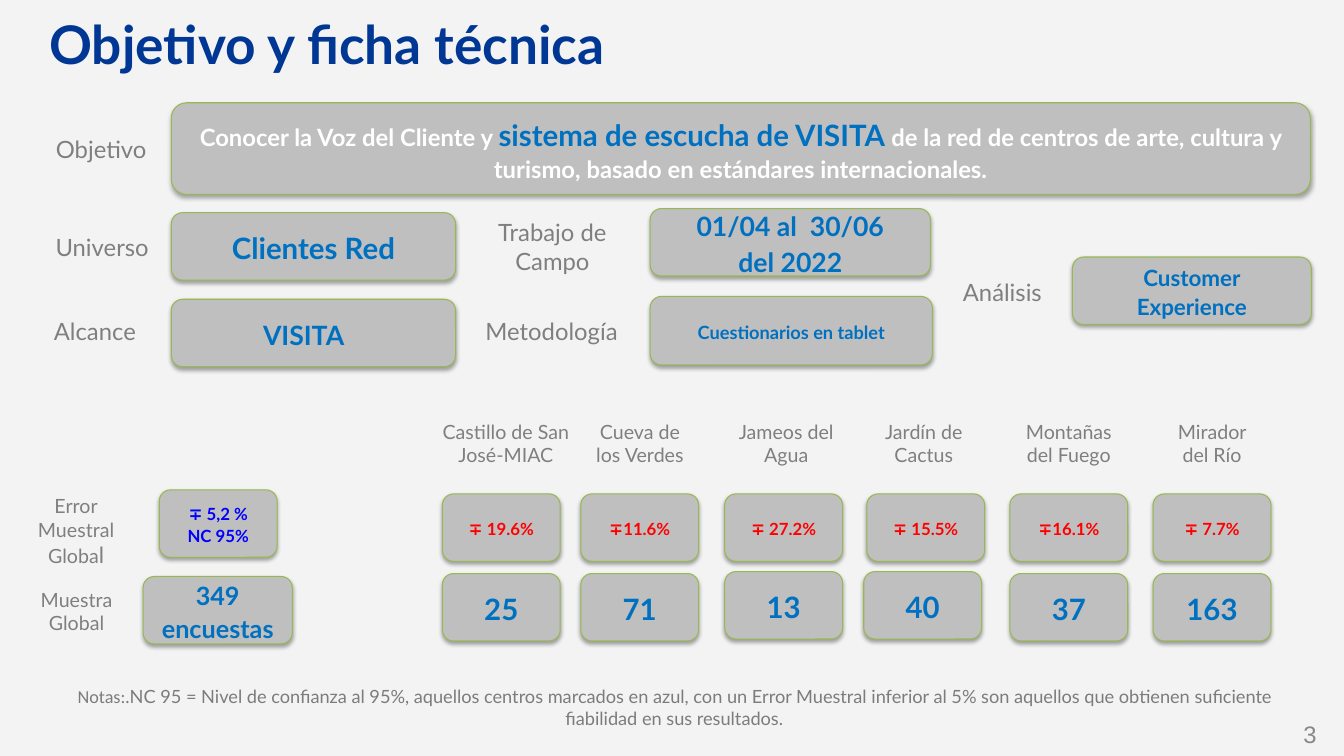
from dataclasses import dataclass

from lxml import etree
from pptx import Presentation
from pptx.dml.color import RGBColor
from pptx.enum import shapes, text
from pptx.oxml import ns
from pptx.util import Pt


@dataclass(frozen=True)
class Style:
    size: float
    color: str
    bold: bool = False
    font: str = "Lato"


class Theme:
    background, box_fill, box_line = "F3F3F3", "BFBFBF", "97B853"
    title = Style(38, "003794", True)
    label = Style(17, "7F7F7F")
    small_label = Style(14, "7F7F7F")
    last_letter = Style(16, "7F7F7F")
    goal = Style(17, "FFFFFF", True)
    value = Style(21, "0070C0", True)
    medium_value = Style(19, "0070C0", True)
    sample_total = Style(18, "0070C0", True)
    analysis = Style(16, "0070C0", True)
    method = Style(13, "0070C0", True)
    global_error = Style(12, "0000FF", True)
    center_error = Style(12, "FF0000", True)
    note = Style(13, "7C7C7C")
    note_lead = Style(13, "7C7C7C", font="Calibri")
    page = Style(17, "888888", font="Arial")


# Content: every text is a list of paragraphs, every paragraph a list of runs
TITLE = [["Objetivo y ficha técnica"]]
GOAL = [["Conocer la Voz del Cliente y ",
         ("sistema de escucha de VISITA ", Theme.value),
         "de la red de centros de arte, cultura y turismo, "
         "basado en estándares internacionales."]]
NOTE = [[("Notas:", Theme.note_lead),
         ".NC 95 = Nivel de confianza al 95%, aquellos centros marcados en azul, "
         "con un Error Muestral inferior al 5% son aquellos que obtienen "
         "suficiente fiabilidad en sus resultados."]]
PAGE = [["3"]]

# (label, label frame, label style, value, value frame, value style)
FACTS = [
    ([["Objetivo"]], (22.3, 91.4, 100, 29.5), Theme.label,
     GOAL, (122.4, 73.4, 813.6, 65.5), Theme.goal),
    ([["Universo"]], (23, 161.3, 100, 29.5), Theme.label,
     [["Clientes Red"]], (122.4, 151.9, 203, 48.2), Theme.value),
    ([["Alcance"]], (15.3, 221.8, 105, 29.5), Theme.label,
     [["VISITA\t"]], (122.4, 213.8, 203, 48.2), Theme.medium_value),
    ([["Trabajo de"], ["Campo"]], (326.2, 151.2, 136.8, 49.7), Theme.label,
     [["01/04 al  30/06"], ["del 2022"]], (464.4, 149, 200.2, 48.2),
     Theme.medium_value),
    ([["Metodología"]], (325.6, 221.8, 136.8, 29.5), Theme.label,
     [["Cuestionarios en tablet"]], (464.4, 211.7, 201.6, 49), Theme.method),
    ([["Análisis"]], (666, 193.7, 100, 29.5), Theme.label,
     [["Customer"], ["Experience"]], (766.1, 183.6, 170.6, 48.2), Theme.analysis),
    ([["Error"], ["Muestral Globa", ("l", Theme.last_letter)]],
     (0, 348.5, 108.7, 61.9), Theme.small_label,
     [["∓ 5,2 %"], ["NC 95%"]], (113.8, 349.9, 84.2, 48.2), Theme.global_error),
    ([["Muestra"], ["Global"]], (0, 415.4, 109.4, 42.5), Theme.small_label,
     [["349"], ["encuestas"]], (102.2, 411.8, 106.6, 48.2), Theme.sample_total),
]

# (center, label left, label width, box left, error, sample, sample nudge)
CENTERS = [
    ("Castillo de San José-MIAC", 307.4, 108, 316, "∓ 19.6%", "25", (0, 0)),
    ("Cueva de los Verdes", 415.4, 83.5, 414.9, "∓11.6%", "71", (0, 0)),
    ("Jameos del Agua", 510.5, 102.2, 517.7, "∓ 27.2%", "13", (0, -1.4)),
    ("Jardín de Cactus", 607.7, 104.4, 619.2, "∓ 15.5%", "40", (-2.2, -1.4)),
    ("Montañas del Fuego", 721.4, 84.2, 721.4, "∓16.1%", "37", (0, 0)),
    ("Mirador del Río", 823.7, 84.2, 823.7, "∓ 7.7%", "163", (0, 0)),
]
LABEL_TOP, LABEL_H = 290.9, 51.1
ERROR_TOP, SAMPLE_TOP = 352.8, 409.7
BOX_W, BOX_H = 84.2, 48.2
INSET_X, INSET_Y = 8.64, 4.32

ALIGN, ANCHOR = text.PP_ALIGN, text.MSO_ANCHOR


def write(shape, paragraphs, style, align=ALIGN.CENTER, anchor=ANCHOR.MIDDLE,
          spacing=1.0, insets=(INSET_X, INSET_Y)):
    frame = shape.text_frame
    frame.word_wrap = True
    frame.auto_size = text.MSO_AUTO_SIZE.NONE
    frame.vertical_anchor = anchor
    frame.margin_left = frame.margin_right = Pt(insets[0])
    frame.margin_top = frame.margin_bottom = Pt(insets[1])
    for index, runs in enumerate(paragraphs):
        paragraph = frame.add_paragraph() if index else frame.paragraphs[0]
        paragraph.alignment = align
        paragraph.line_spacing = spacing
        for item in runs:
            words, look = (item, style) if isinstance(item, str) else item
            run = paragraph.add_run()
            run.text = words
            run.font.name = look.font
            run.font.size = Pt(look.size)
            run.font.bold = look.bold
            run.font.color.rgb = RGBColor.from_string(look.color)


def add_label(slide, frame, paragraphs, style, **options):
    label = slide.shapes.add_textbox(*map(Pt, frame))
    write(label, paragraphs, style, **options)


def add_box(slide, frame, paragraphs, style):
    box = slide.shapes.add_shape(shapes.MSO_SHAPE.ROUNDED_RECTANGLE, *map(Pt, frame))
    box.fill.solid()
    box.fill.fore_color.rgb = RGBColor.from_string(Theme.box_fill)
    box.line.color.rgb = RGBColor.from_string(Theme.box_line)
    box.line.width = Pt(0.75)
    # Soft shadow straight below the box
    box.shadow.inherit = False
    effects = box._element.spPr.find(ns.qn("a:effectLst"))
    shadow = etree.SubElement(effects, ns.qn("a:outerShdw"), blurRad=str(Pt(3.1)),
                              dist=str(Pt(1.8)), dir="5400000", rotWithShape="0")
    color = etree.SubElement(shadow, ns.qn("a:srgbClr"), val="000000")
    etree.SubElement(color, ns.qn("a:alpha"), val="35000")
    write(box, paragraphs, style, spacing=1.1)


def main():
    deck = Presentation()
    deck.slide_width, deck.slide_height = Pt(960), Pt(540)
    slide = deck.slides.add_slide(deck.slide_layouts[5])
    slide.background.fill.solid()
    slide.background.fill.fore_color.rgb = RGBColor.from_string(Theme.background)

    # Title
    title = slide.shapes.title
    title.left, title.top, title.width, title.height = map(Pt, (26.6, 1.4, 901.4, 59))
    write(title, TITLE, Theme.title, align=ALIGN.LEFT)

    # Study facts
    for label, label_frame, label_style, value, value_frame, value_style in FACTS:
        add_label(slide, label_frame, label, label_style)
        add_box(slide, value_frame, value, value_style)

    # Error and sample of each center
    for name, label_x, label_w, box_x, error, sample, (dx, dy) in CENTERS:
        add_label(slide, (label_x, LABEL_TOP, label_w, LABEL_H), [[name]],
                  Theme.small_label)
        add_box(slide, (box_x, ERROR_TOP, BOX_W, BOX_H), [[error]],
                Theme.center_error)
        add_box(slide, (box_x + dx, SAMPLE_TOP + dy, BOX_W, BOX_H), [[sample]],
                Theme.value)

    # Note and page number
    add_label(slide, (26.6, 485.3, 910, 54.7), NOTE, Theme.note, anchor=ANCHOR.TOP)
    add_label(slide, (772.6, 510.5, 167.8, 28.1), PAGE, Theme.page,
              align=ALIGN.RIGHT, insets=(0, 0))

    deck.save("out.pptx")


if __name__ == "__main__":
    main()
